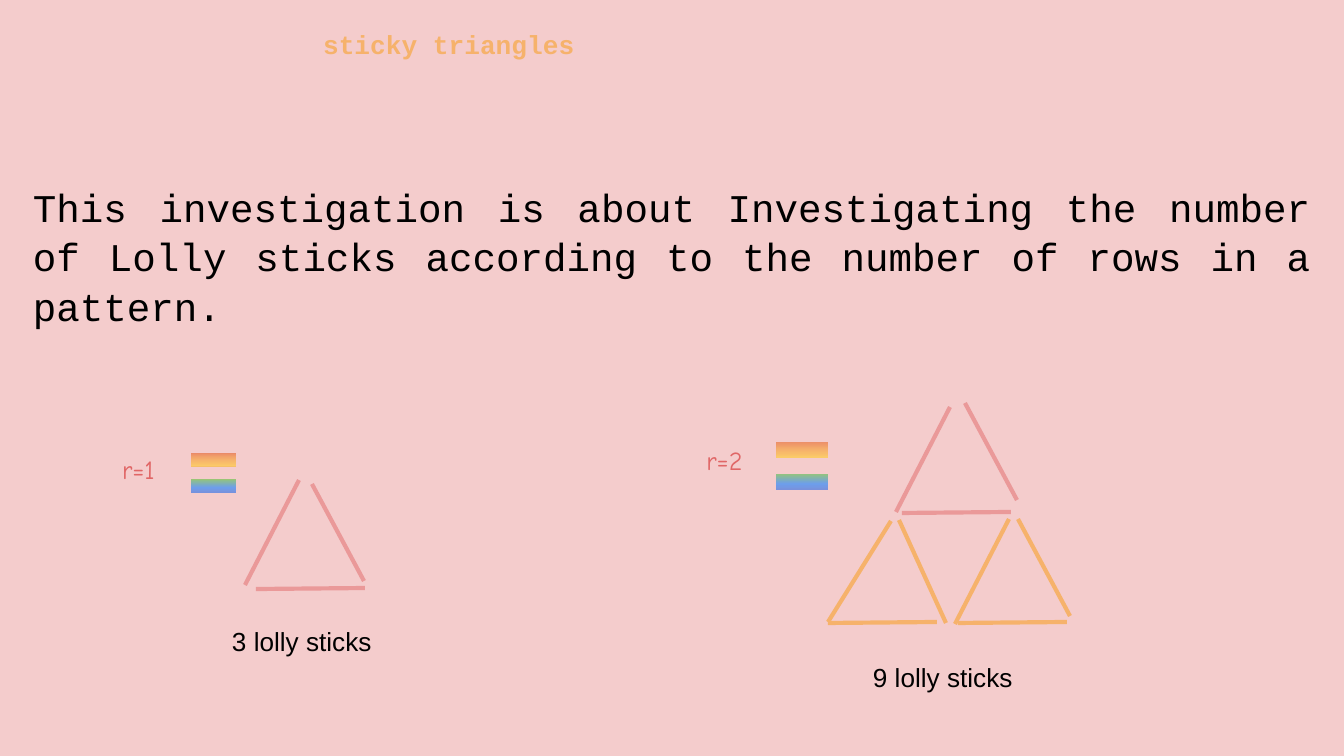
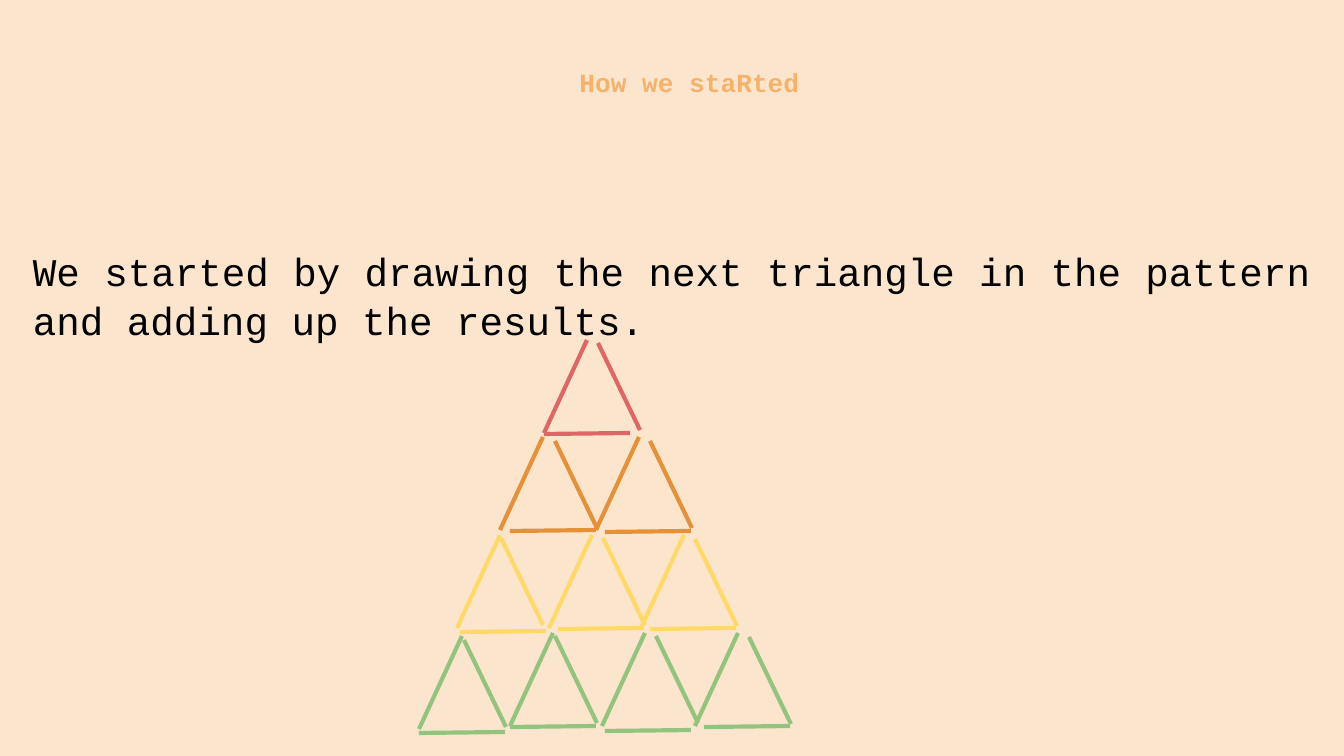
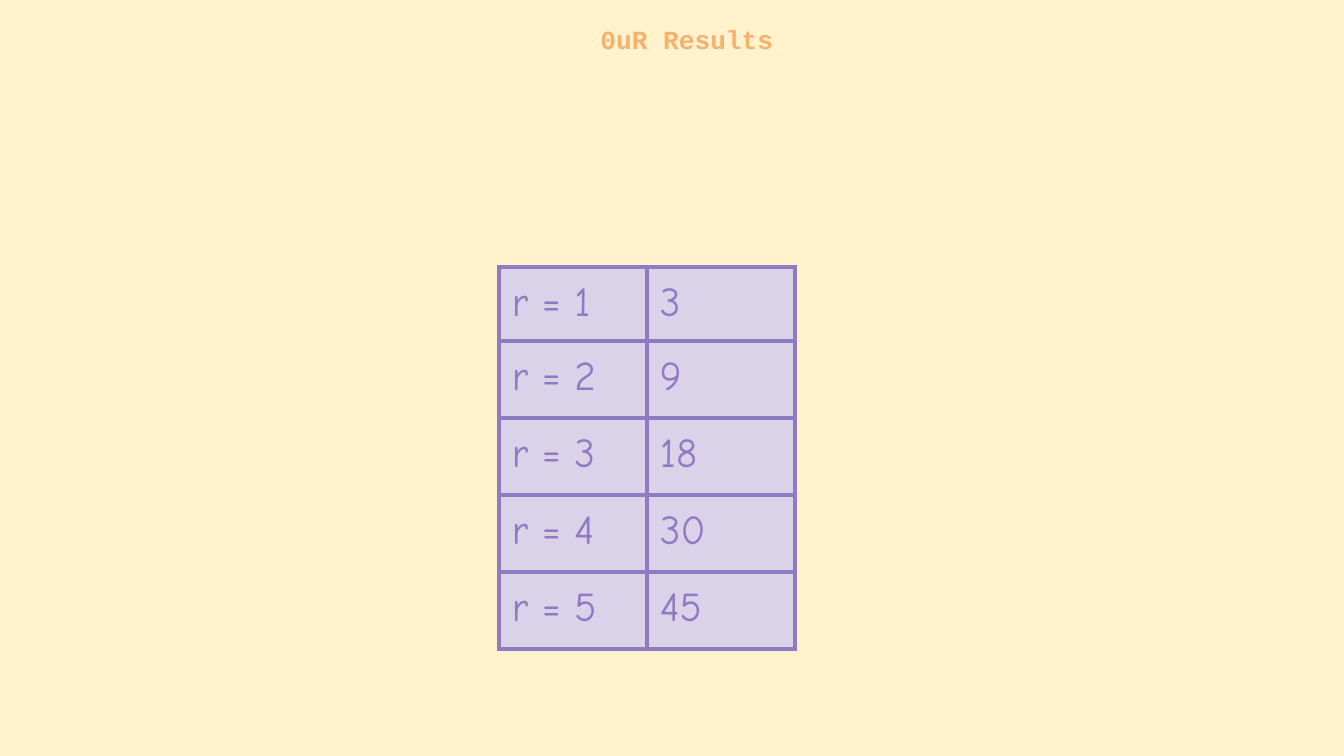
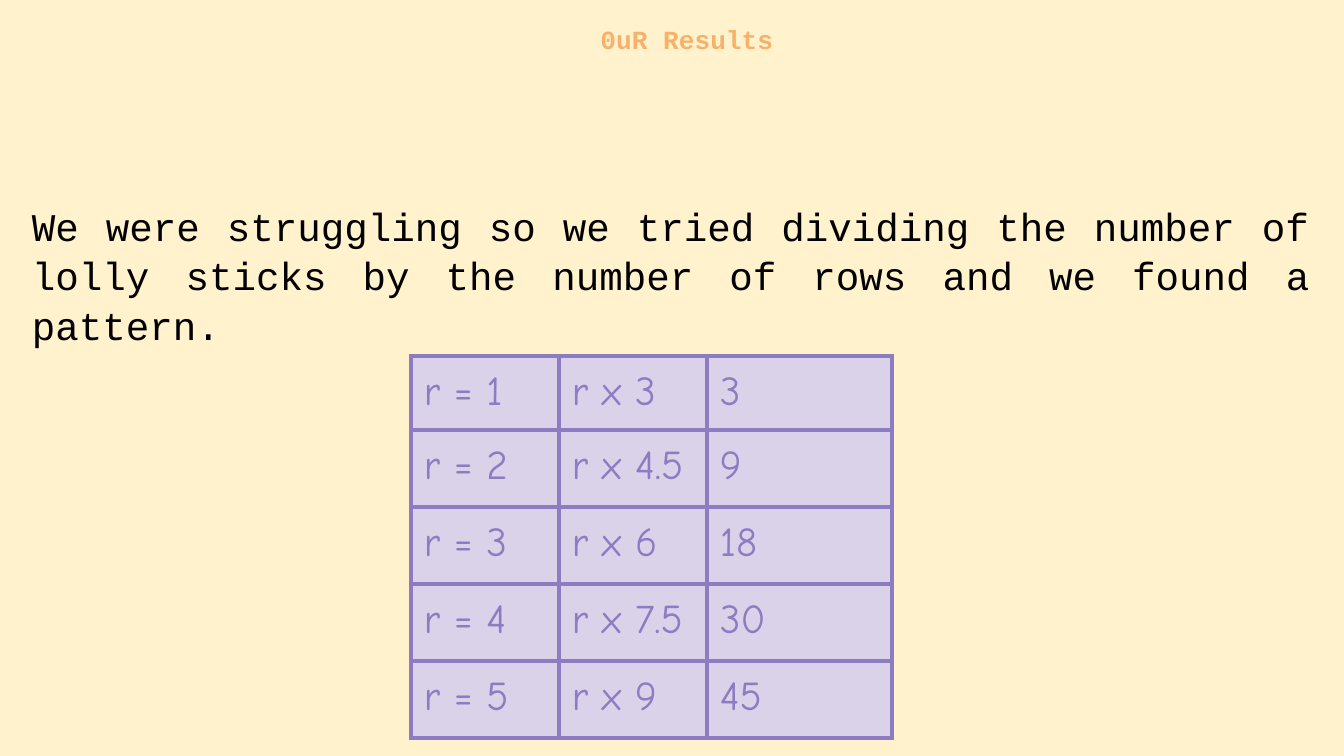
import pptx
import pptx.util
import pptx.dml.color
import pptx.enum.shapes
import pptx.enum.text
import pptx.oxml
import pptx.oxml.ns

PX = 6804  # EMU in one px, 134.4 px to the inch
PT = pptx.util.Pt
ALIGN = pptx.enum.text.PP_ALIGN
QN = pptx.oxml.ns.qn
NS = pptx.oxml.ns.nsdecls("a")

# Shared colours
ROSE, CORAL, PINK = "F4CCCC", "E06666", "EA9999"
PEACH, ORANGE, AMBER = "FCE5CD", "E69138", "F6B26B"
CREAM, YELLOW, GREEN = "FFF2CC", "FFD966", "93C47D"
PURPLE, LILAC, BLACK = "8E7CC3", "D9D2E9", "000000"
RAINBOW = {0: CORAL, 26: AMBER, 43: YELLOW, 62: GREEN, 77: "6D9EEB", 100: PURPLE}

# Shared text formats
SIDES = dict(margin_left=13 * PX, margin_right=13 * PX)
PAD = dict(SIDES, margin_top=13 * PX, margin_bottom=13 * PX)
FRAME = dict(
    word_wrap=True,
    auto_size=pptx.enum.text.MSO_AUTO_SIZE.NONE,
    vertical_anchor=pptx.enum.text.MSO_ANCHOR.TOP,
)
FORMS = {
    "title": dict(
        frame=dict(FRAME, margin_top=11 * PX),
        para=dict(alignment=ALIGN.CENTER),
        font=dict(name="Courier New", size=PT(14), bold=True),
        hue=RAINBOW,
    ),
    "body": dict(
        frame=dict(FRAME, **SIDES, margin_top=17 * PX),
        para=dict(alignment=ALIGN.JUSTIFY, line_spacing=1.05),
        font=dict(name="Courier New", size=PT(21)),
        hue=BLACK,
    ),
    "label": dict(
        frame=dict(FRAME, margin_top=11 * PX),
        para=dict(alignment=ALIGN.CENTER),
        font=dict(name="Comic Neue", size=PT(14)),
        hue=CORAL,
    ),
    "count": dict(
        frame=dict(FRAME, **PAD),
        para=dict(alignment=ALIGN.LEFT),
        font=dict(name="Arial", size=PT(14)),
        hue=BLACK,
    ),
    "cell": dict(
        frame={},
        para=dict(alignment=ALIGN.LEFT),
        font=dict(name="Comic Neue", size=PT(22)),
        hue=PURPLE,
    ),
}


def paint(fill, hue, node=None):
    """Fill with a hex colour, or with a dict of gradient stops held in node."""
    if isinstance(hue, str):
        fill.solid()
        fill.fore_color.rgb = pptx.dml.color.RGBColor.from_string(hue)
        return
    fill.gradient()
    fill.gradient_angle = 270
    stops = node.find(".//" + QN("a:gsLst"))
    stops.clear()
    for pos, tone in hue.items():
        stops.append(pptx.oxml.parse_xml(
            f'<a:gs {NS} pos="{pos * 1000}"><a:srgbClr val="{tone}"/></a:gs>'))


def write(frame, text, kind):
    form = FORMS[kind]
    para = frame.paragraphs[0]
    run = para.add_run()
    run.text = text
    for part, key in ((frame, "frame"), (para, "para"), (run.font, "font")):
        for name, value in form[key].items():
            setattr(part, name, value)
    paint(run.font.fill, form["hue"], run._r)


deck = pptx.Presentation()
deck.slide_width, deck.slide_height = 1344 * PX, 756 * PX

# Slides with their titles
pages = []
for back, title, box in (
    (ROSE, "sticky triangles", (146, 17, 606, 172)),
    (PEACH, "How we staRted", (320, 55, 739, 133)),
    (CREAM, "0uR Results", (384, 12, 606, 172)),
    (CREAM, "0uR Results", (384, 12, 606, 172)),
):
    page = deck.slides.add_slide(deck.slide_layouts[5])
    paint(page.background.fill, back)
    head = page.shapes.title
    head.left, head.top, head.width, head.height = (v * PX for v in box)
    write(head.text_frame, title, "title")
    pages.append(page)
intro, start, first, second = pages

# Text boxes
for page, kind, text, box in (
    (intro, "body", "This investigation is about Investigating the number of Lolly "
     "sticks according to the number of rows in a pattern.", (20, 164, 1304, 191)),
    (intro, "label", "r=1", (94, 442, 89, 60)),
    (intro, "label", "r=2", (680, 433, 89, 66)),
    (intro, "count", "3 lolly sticks", (219, 612, 195, 59)),
    (intro, "count", "9 lolly sticks", (860, 648, 195, 59)),
    (start, "body", "We started by drawing the next triangle in the pattern "
     "and adding up the results.", (20, 228, 1304, 152)),
    (second, "body", "We were struggling so we tried dividing the number of lolly "
     "sticks by the number of rows and we found a pattern.", (19, 183, 1304, 226)),
):
    note = page.shapes.add_textbox(*(v * PX for v in box))
    write(note.text_frame, text, kind)

# Rainbow equal signs
for box in ((183, 446, 62, 54), (767, 433, 71, 66)):
    sign = intro.shapes.add_shape(
        pptx.enum.shapes.MSO_SHAPE.MATH_EQUAL, *(v * PX for v in box))
    sign.shadow.inherit = False
    sign.adjustments[0], sign.adjustments[1] = 0.235, 0.251
    paint(sign.fill, RAINBOW, sign._element.spPr)
    sign.line.fill.background()

# Lolly sticks: each triangle lists where its left, right and base sticks start;
# the spans give how far those three sticks reach
BIG = (-54, 105), (52, 97), (109, -1)
SKEW = (-63, 101), (47, 103), (109, -1)
SMALL = (-43, 93), (42, 87), (86, -1)
for page, hue, spans, group in (
    (intro, PINK, BIG, [((950, 407), (965, 403), (902, 513)),
                        ((299, 480), (312, 484), (256, 589))]),
    (intro, AMBER, BIG, [((1009, 519), (1018, 519), (958, 623))]),
    (intro, AMBER, SKEW, [((891, 521), (899, 520), (828, 623))]),
    (start, CORAL, SMALL, [((587, 340), (598, 343), (544, 434))]),
    (start, ORANGE, SMALL, [((639, 437), (650, 441), (605, 532)),
                            ((543, 437), (555, 441), (510, 531))]),
    (start, YELLOW, SMALL, [((684, 535), (695, 539), (650, 629)),
                            ((592, 535), (603, 538), (558, 629)),
                            ((500, 535), (501, 538), (460, 632))]),
    (start, GREEN, SMALL, [((738, 633), (749, 637), (704, 727)),
                           ((645, 633), (656, 636), (605, 731)),
                           ((553, 633), (555, 636), (510, 727)),
                           ((462, 636), (464, 640), (419, 733))]),
):
    for starts in group:
        for (x, y), (dx, dy) in zip(starts, spans):
            stick = page.shapes.add_connector(
                pptx.enum.shapes.MSO_CONNECTOR.STRAIGHT,
                x * PX, y * PX, (x + dx) * PX, (y + dy) * PX)
            paint(stick.line.fill, hue)
            stick.line.width = PT(2.25)
            stick._element.spPr.append(
                pptx.oxml.parse_xml(f"<a:effectLst {NS}/>"))

# Result tables
ROWS = 74, 77, 77, 77, 77
TOTALS = "3", "9", "18", "30", "45"
RATES = "3", "4.5", "6", "7.5", "9"
names = [f"r = {n}" for n in range(1, 6)]
rates = [f"r x {rate}" for rate in RATES]
for page, x, y, wide, data in (
    (first, 499, 267, (148, 148), zip(names, TOTALS)),
    (second, 411, 356, (148, 148, 185), zip(names, rates, TOTALS)),
):
    grid = page.shapes.add_table(
        len(ROWS), len(wide), x * PX, y * PX, sum(wide) * PX, sum(ROWS) * PX).table
    grid.first_row = grid.horz_banding = False
    for col, width in zip(grid.columns, wide):
        col.width = width * PX
    for row, high, texts in zip(grid.rows, ROWS, data):
        row.height = high * PX
        for cell, text in zip(row.cells, texts):
            for name, value in PAD.items():
                setattr(cell, name, value)
            edges = cell._tc.get_or_add_tcPr()
            for side in "LRTB":
                edges.append(pptx.oxml.parse_xml(
                    f'<a:ln{side} {NS} w="{PT(2.25)}"><a:solidFill>'
                    f'<a:srgbClr val="{PURPLE}"/></a:solidFill></a:ln{side}>'))
            paint(cell.fill, LILAC)
            write(cell.text_frame, text, "cell")

deck.save("out.pptx")
